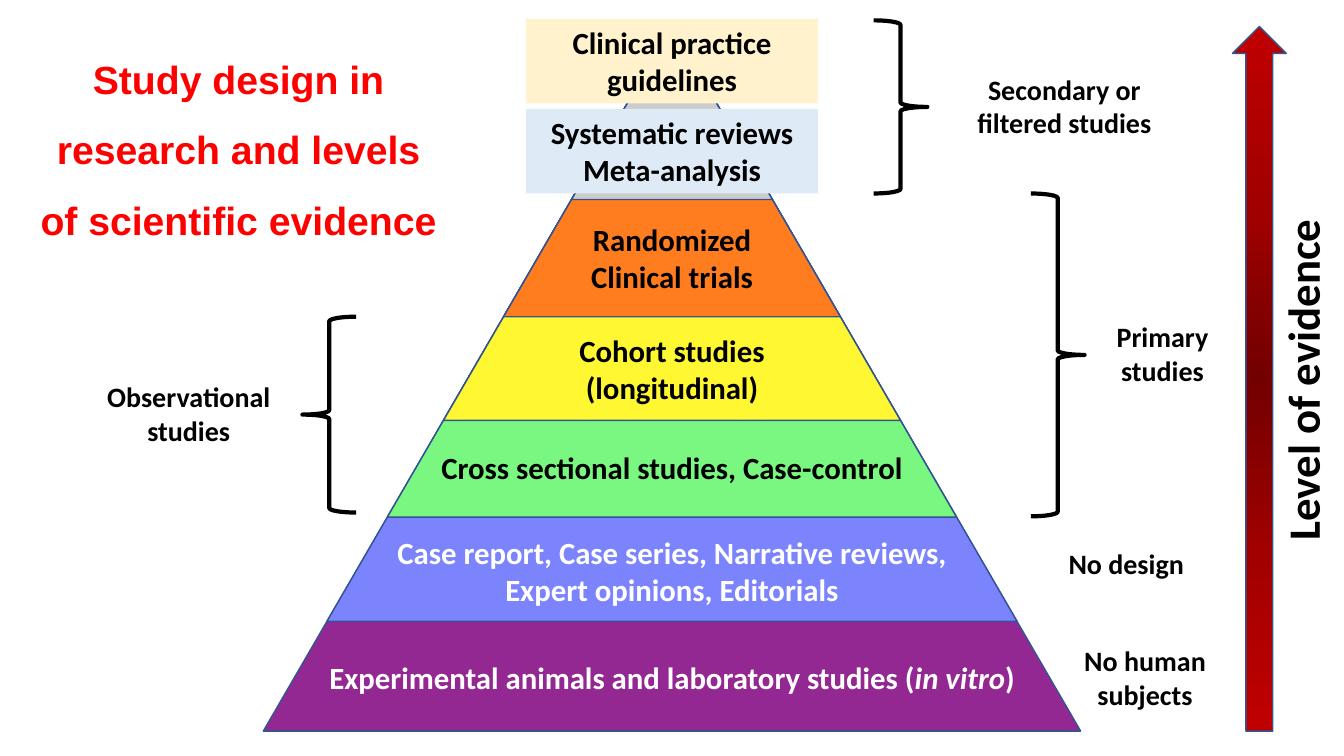
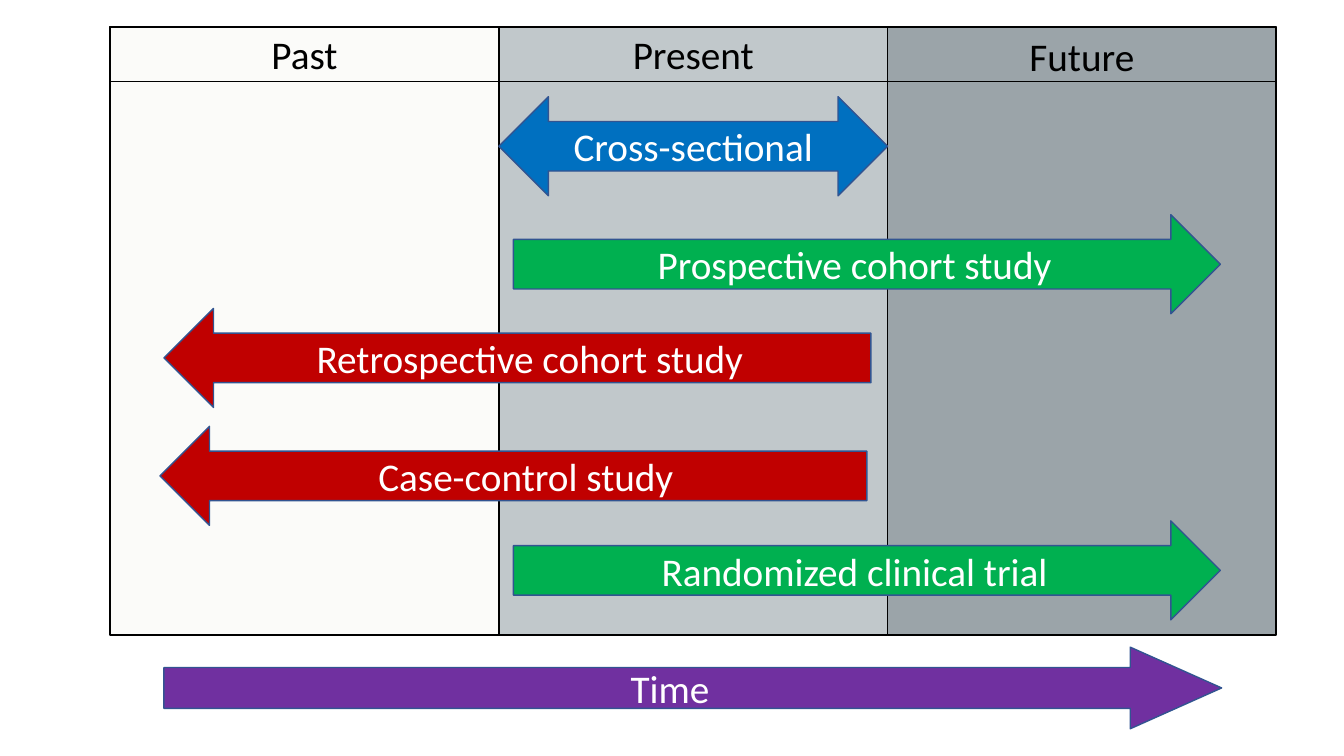
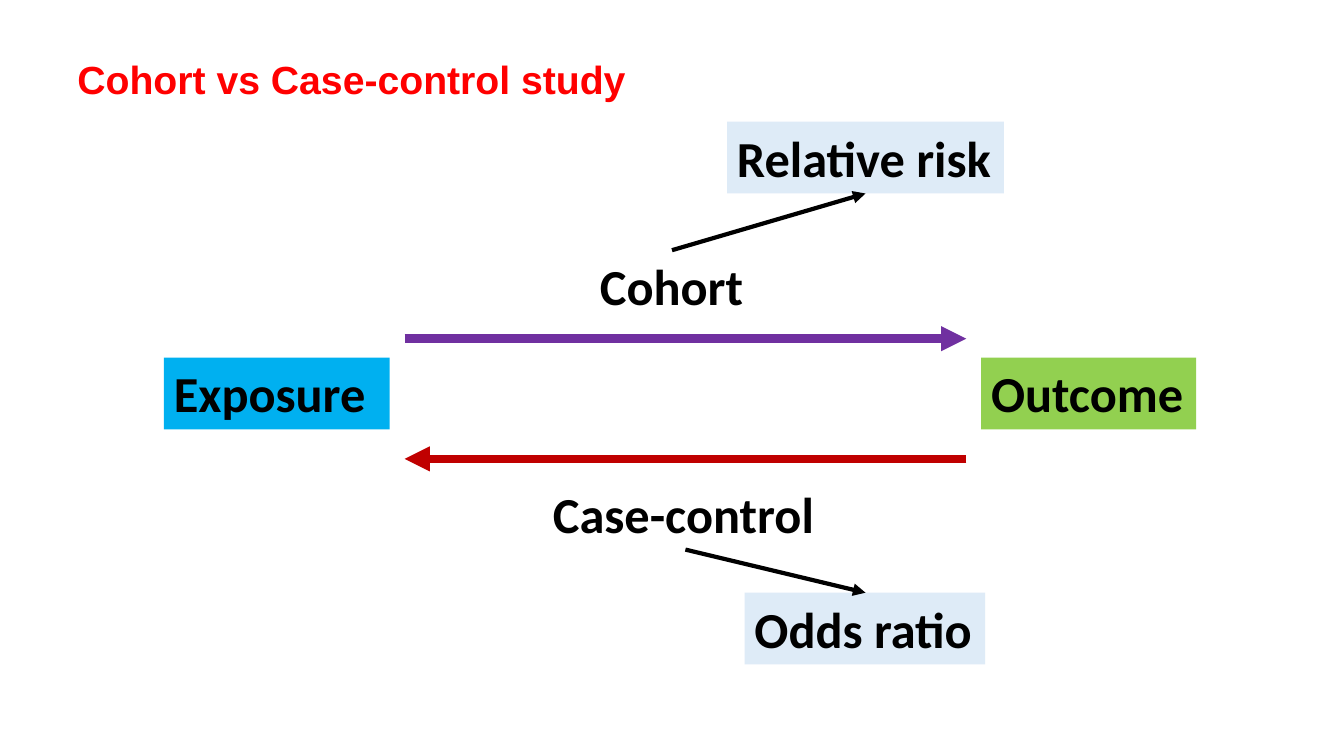
import dataclasses
import typing

import lxml.etree
import pptx
import pptx.dml.color
import pptx.enum.shapes
import pptx.enum.text
import pptx.oxml
import pptx.oxml.ns
import pptx.slide
import pptx.text.text
import pptx.util

Preset = pptx.enum.shapes.MSO_SHAPE
Align = pptx.enum.text.PP_ALIGN
Anchor = pptx.enum.text.MSO_ANCHOR
qualified = pptx.oxml.ns.qn


@dataclasses.dataclass(frozen=True)
class Theme:
    slide_width: int = pptx.util.Inches(13.333)
    slide_height: int = pptx.util.Inches(7.5)
    title_font: str = "Arial"
    body_font: str = "Calibri"
    title_size: int = 28
    tier_size: int = 22
    side_size: int = 20
    axis_size: int = 32
    timeline_size: int = 28
    concept_size: int = 36
    title_colour: str = "FF0000"
    dark: str = "000000"
    light: str = "FFFFFF"
    outline: str = "325491"
    pale_blue: str = "DEEBF7"
    cream: str = "FFF2CC"
    blue: str = "0070C0"
    green: str = "00B050"
    red: str = "C00000"
    purple: str = "7030A0"
    sky: str = "00B0F0"
    lime: str = "92D050"
    tiers: tuple[str, ...] = ("932892", "7B84FD", "79F781", "FFF732", "FF7D1E", "CBCCCE")
    periods: tuple[str, ...] = ("FBFBF9", "C1C8CB", "9BA4A9")
    gradient: tuple[tuple[int, str], ...] = ((0, "720000"), (50, "A20000"), (100, "C00000"))


THEME = Theme()


class Box(typing.NamedTuple):
    """Position and size in percent of the slide."""

    left: float
    top: float
    width: float
    height: float

    def lengths(self) -> tuple[int, int, int, int]:
        return across(self.left), down(self.top), across(self.width), down(self.height)


@dataclasses.dataclass(frozen=True)
class Caption:
    text: str
    box: Box
    size: int
    colour: str = THEME.dark
    fill: str | None = None
    wrap: bool = True
    align: Align = Align.CENTER
    italic: str = ""
    bold: bool = True
    rotation: int = 0


@dataclasses.dataclass(frozen=True)
class StudyArrow:
    text: str
    preset: Preset
    box: Box
    fill: str
    adjustments: tuple[float, ...] = ()


@dataclasses.dataclass(frozen=True)
class Link:
    start: tuple[float, float]
    end: tuple[float, float]
    colour: str
    width: int


def across(percent: float) -> int:
    return round(THEME.slide_width * percent / 100)


def down(percent: float) -> int:
    return round(THEME.slide_height * percent / 100)


def centred(top: float, width: float, height: float) -> Box:
    return Box(50 - width / 2, top, width, height)


def rgb(colour: str) -> pptx.dml.color.RGBColor:
    return pptx.dml.color.RGBColor.from_string(colour)


def write_text(
    frame: pptx.text.text.TextFrame,
    text: str,
    *,
    size: int,
    colour: str,
    font: str = THEME.body_font,
    bold: bool = False,
    italic: str = "",
    align: Align = Align.CENTER,
    anchor: Anchor = Anchor.TOP,
    wrap: bool = True,
    line_spacing: float | None = None,
) -> None:
    frame.word_wrap = wrap
    frame.auto_size = pptx.enum.text.MSO_AUTO_SIZE.NONE
    frame.vertical_anchor = anchor
    for index, line in enumerate(text.split("\n")):
        paragraph = frame.add_paragraph() if index else frame.paragraphs[0]
        paragraph.alignment = align
        paragraph.line_spacing = line_spacing
        pieces = line.partition(italic) if italic else (line,)
        for piece in filter(None, pieces):
            run = paragraph.add_run()
            run.text = piece
            run.font.name = font
            run.font.size = pptx.util.Pt(size)
            run.font.bold = bold
            run.font.italic = piece == italic
            run.font.color.rgb = rgb(colour)


def add_title(slide: pptx.slide.Slide, text: str, box: Box) -> None:
    title = slide.shapes.title
    title.left, title.top, title.width, title.height = box.lengths()
    write_text(
        title.text_frame, text, size=THEME.title_size, colour=THEME.title_colour,
        font=THEME.title_font, bold=True, line_spacing=1.5,
    )


def add_caption(slide: pptx.slide.Slide, caption: Caption) -> None:
    shape = slide.shapes.add_textbox(*caption.box.lengths())
    shape.rotation = caption.rotation
    if caption.fill:
        shape.fill.solid()
        shape.fill.fore_color.rgb = rgb(caption.fill)
    write_text(
        shape.text_frame, caption.text, size=caption.size, colour=caption.colour,
        bold=caption.bold, italic=caption.italic, align=caption.align, wrap=caption.wrap,
    )


def add_preset(
    slide: pptx.slide.Slide,
    preset: Preset,
    box: Box,
    fill: str | None = None,
    line: str = THEME.outline,
    line_width: int = 1,
):
    shape = slide.shapes.add_shape(preset, *box.lengths())
    shape.shadow.inherit = False
    if fill:
        shape.fill.solid()
        shape.fill.fore_color.rgb = rgb(fill)
    else:
        shape.fill.background()
    shape.line.color.rgb = rgb(line)
    shape.line.width = pptx.util.Pt(line_width)
    return shape


def add_study_arrow(slide: pptx.slide.Slide, arrow: StudyArrow) -> None:
    shape = add_preset(slide, arrow.preset, arrow.box, arrow.fill)
    for index, value in enumerate(arrow.adjustments):
        shape.adjustments[index] = value
    write_text(
        shape.text_frame, arrow.text, size=THEME.timeline_size,
        colour=THEME.light, anchor=Anchor.MIDDLE,
    )


def add_link(slide: pptx.slide.Slide, link: Link) -> None:
    connector = slide.shapes.add_connector(
        pptx.enum.shapes.MSO_CONNECTOR.STRAIGHT,
        across(link.start[0]), down(link.start[1]), across(link.end[0]), down(link.end[1]),
    )
    connector.line.color.rgb = rgb(link.colour)
    connector.line.width = pptx.util.Pt(link.width)
    properties = connector.element.spPr
    line = properties.find(qualified("a:ln"))
    lxml.etree.SubElement(line, qualified("a:tailEnd"), type="triangle")
    lxml.etree.SubElement(properties, qualified("a:effectLst"))


def apply_radial_gradient(shape) -> None:
    shape.fill.gradient()
    stops = "".join(
        f'<a:gs pos="{position * 1000}"><a:srgbClr val="{colour}"/></a:gs>'
        for position, colour in THEME.gradient
    )
    properties = shape.element.spPr
    properties.replace(
        properties.find(qualified("a:gradFill")),
        pptx.oxml.parse_xml(
            f'<a:gradFill {pptx.oxml.ns.nsdecls("a")} rotWithShape="1"><a:gsLst>{stops}</a:gsLst>'
            '<a:path path="circle"><a:fillToRect l="50000" t="50000" r="50000" b="50000"/>'
            "</a:path></a:gradFill>"
        ),
    )


def build_pyramid(slide: pptx.slide.Slide) -> None:
    apex, aspect = 3.5, 1.16
    one_line, two_lines, side_lines, brace_width = 6.3, 11.2, 10.3, 4
    add_title(
        slide, "Study design in research and levels of scientific evidence",
        Box(2.2, apex, 31.1, 28.4),
    )
    heights = (93.2, 78.7, 64.9, 52.1, 38.4, 22.9)
    for height, fill in zip(heights, THEME.tiers):
        width = height * aspect * THEME.slide_height / THEME.slide_width
        add_preset(slide, Preset.ISOSCELES_TRIANGLE, centred(apex, width, height), fill)

    for left, top, height, preset in (
        (22.5, 41.9, 25.9, Preset.LEFT_BRACE),
        (76.7, 25.6, 42.7, Preset.RIGHT_BRACE),
        (65, 2.7, 22.9, Preset.RIGHT_BRACE),
    ):
        add_preset(
            slide, preset, Box(left, top, brace_width, height), line=THEME.dark, line_width=3
        )
    arrow = add_preset(slide, Preset.UP_ARROW, Box(91.7, apex, brace_width, heights[0]))
    apply_radial_gradient(arrow)

    tier, side = THEME.tier_size, THEME.side_size
    captions = (
        Caption(
            "Experimental animals and laboratory studies (in vitro)",
            centred(86.5, 53.1, one_line), tier, THEME.light, wrap=False, italic="in vitro",
        ),
        Caption(
            "Case report, Case series, Narrative reviews, Expert opinions, Editorials",
            centred(69.9, 44.7, two_lines), tier, THEME.light,
        ),
        Caption("Cross sectional studies, Case-control", centred(58.7, 44.7, one_line), tier),
        Caption("Cohort studies\n(longitudinal)", centred(43.2, 44.7, two_lines), tier),
        Caption("Randomized\nClinical trials", centred(28.5, 44.7, two_lines), tier),
        Caption(
            "Systematic reviews\nMeta-analysis", centred(14.4, 21.7, two_lines), tier,
            fill=THEME.pale_blue,
        ),
        Caption(
            "Clinical practice guidelines", centred(2.5, 21.7, two_lines), tier, fill=THEME.cream
        ),
        Caption("No design", Box(76.8, 71.6, 14, 5.9), side),
        Caption("No human subjects", Box(76.6, 84.5, 17.2, side_lines), side),
        Caption("Observational studies", Box(4.4, 49.6, 19.3, side_lines), side),
        Caption("Primary studies", Box(82.2, 41.6, 8.6, side_lines), side),
        Caption("Secondary or filtered studies", Box(71, 8.9, 16.4, side_lines), side),
        Caption("Level of evidence", Box(83.9, 46, 26, 8.5), THEME.axis_size, rotation=270),
    )
    for caption in captions:
        add_caption(slide, caption)


def build_timeline(slide: pptx.slide.Slide) -> None:
    left, top, column, height = 8.2, 3.6, 28.92, 80.4
    long_arrow, arrow_height = 52.6, 13.1
    past_edge, present_edge = 12.2, 38.2
    for index, fill in enumerate(THEME.periods):
        box = Box(left + index * column, top, column, height)
        add_preset(slide, Preset.RECTANGLE, box, fill, THEME.dark)
    header = Box(left, top, column * len(THEME.periods), 7.2)
    add_preset(slide, Preset.RECTANGLE, header, line=THEME.dark)
    for index, (text, label_top) in enumerate((("Past", 3.3), ("Present", 3.3), ("Future", 3.6))):
        box = Box(left + index * column, label_top, column, 7.6)
        add_caption(slide, Caption(text, box, THEME.timeline_size, bold=False))

    arrows = (
        StudyArrow(
            "Cross-sectional", Preset.LEFT_RIGHT_ARROW,
            Box(left + column, 12.8, column, arrow_height), THEME.blue,
        ),
        StudyArrow(
            "Prospective cohort study", Preset.RIGHT_ARROW,
            Box(present_edge, 28.4, long_arrow, arrow_height), THEME.green,
        ),
        StudyArrow(
            "Retrospective cohort study", Preset.LEFT_ARROW,
            Box(past_edge, 40.8, long_arrow, arrow_height), THEME.red,
        ),
        StudyArrow(
            "Case-control study", Preset.LEFT_ARROW,
            Box(11.9, 56.4, long_arrow, arrow_height), THEME.red,
        ),
        StudyArrow(
            "Randomized clinical trial", Preset.RIGHT_ARROW,
            Box(present_edge, 68.9, long_arrow, arrow_height), THEME.green,
        ),
        StudyArrow(
            "Time", Preset.RIGHT_ARROW, Box(past_edge, 85.6, 78.7, 10.8), THEME.purple,
            (0.5, 1.12),
        ),
    )
    for arrow in arrows:
        add_study_arrow(slide, arrow)


def build_comparison(slide: pptx.slide.Slide) -> None:
    add_title(slide, "Cohort vs Case-control study", Box(2.2, 3.5, 47.9, 9.6))
    concepts = (
        ("Exposure", 12.2, 47.3, 16.8, THEME.sky),
        ("Outcome", 73, 47.3, 16, THEME.lime),
        ("Cohort", 43.9, 33.1, 12.3, None),
        ("Case-control", 40.4, 63.2, 21.2, None),
        ("Relative risk", 54.1, 16.1, 20.6, THEME.pale_blue),
        ("Odds ratio", 55.4, 78.4, 17.9, THEME.pale_blue),
    )
    for text, left, top, width, fill in concepts:
        add_caption(
            slide,
            Caption(
                text, Box(left, top, width, 9.5), THEME.concept_size,
                fill=fill, wrap=text == "Exposure", align=Align.LEFT,
            ),
        )
    links = (
        Link((30.1, 44.8), (71.9, 44.8), THEME.purple, 6),
        Link((71.9, 60.7), (30.1, 60.7), THEME.red, 6),
        Link((50, 33.1), (64.4, 25.6), THEME.dark, 3),
        Link((51, 72.7), (64.4, 78.4), THEME.dark, 3),
    )
    for link in links:
        add_link(slide, link)


def main() -> None:
    presentation = pptx.Presentation()
    presentation.slide_width = THEME.slide_width
    presentation.slide_height = THEME.slide_height
    title_only = presentation.slide_layouts.get_by_name("Title Only")
    blank = presentation.slide_layouts.get_by_name("Blank")
    for layout, build in (
        (title_only, build_pyramid),
        (blank, build_timeline),
        (title_only, build_comparison),
    ):
        build(presentation.slides.add_slide(layout))
    presentation.save("out.pptx")


if __name__ == "__main__":
    main()
